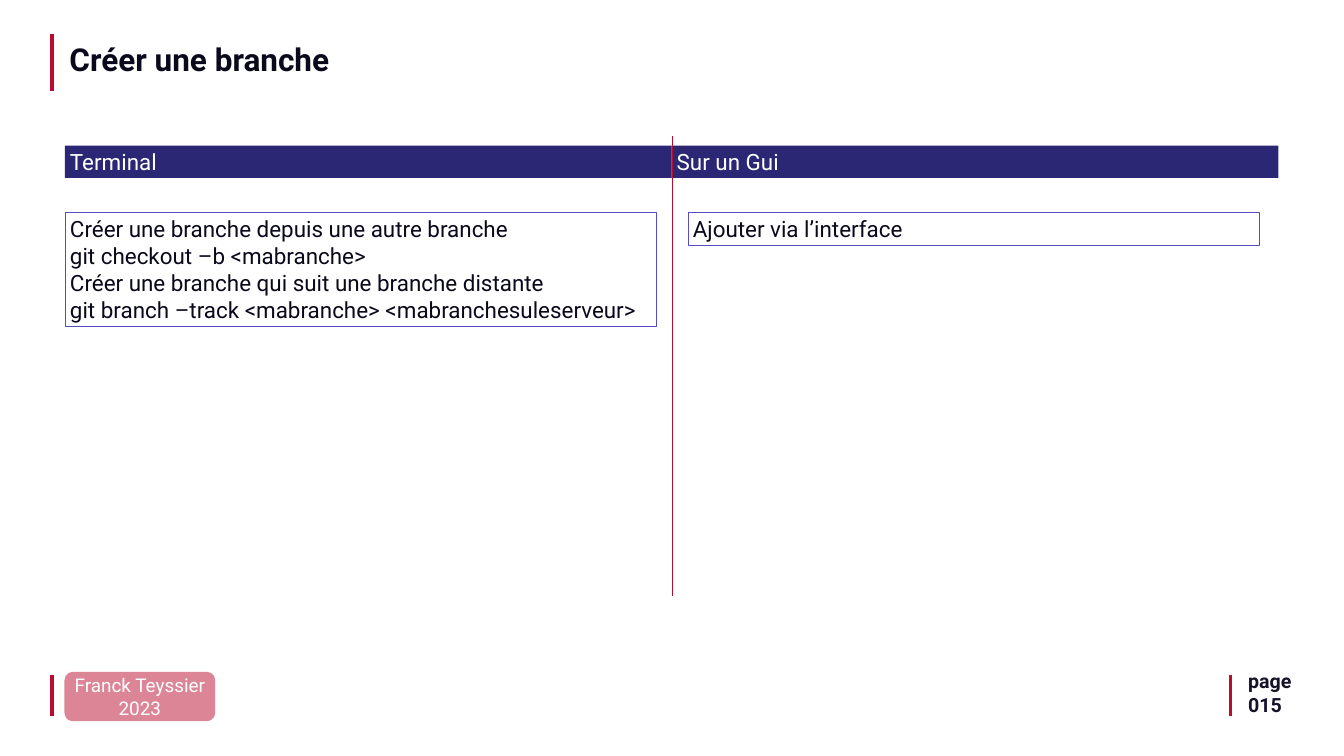
from lxml import etree
from pptx import Presentation
from pptx.dml.color import RGBColor
from pptx.enum.shapes import MSO_CONNECTOR, MSO_SHAPE
from pptx.enum.text import MSO_ANCHOR, PP_ALIGN
from pptx.oxml.ns import qn
from pptx.util import Inches, Pt

COLORS = {
    "red": "BA0C2F", "navy": "2B2774", "violet": "544DC4",
    "ink": "0A091B", "page": "15122A", "white": "FFFFFF",
}

# Content
TITLE = ["Créer une branche"]
COLUMNS = [
    {"heading": "Terminal", "left": 1.29, "body_left": 1.29, "body_width": 11.73,
     "lines": ["Créer une branche depuis une autre branche",
               "git checkout –b <mabranche>",
               "Créer une branche qui suit une branche distante",
               "git branch –track <mabranche> <mabranchesuleserveur>"]},
    {"heading": "Sur un Gui", "left": 13.33, "body_left": 13.65, "body_width": 11.34,
     "lines": ["Ajouter via l’interface"]},
]
AUTHOR = ["Franck Teyssier", "2023"]
PAGE_NUMBER = ["page", "015"]

# Text formats
FORMATS = {
    "title": {"size": Pt(45), "bold": True, "color": "ink"},
    "heading": {"size": Pt(32), "bold": False, "color": "white"},
    "body": {"size": Pt(32), "bold": False, "color": "ink"},
    "author": {"size": Pt(27), "bold": False, "color": "white"},
    "page": {"size": Pt(28), "bold": True, "color": "page"},
}

# Vertical rules: x, top, bottom, width in points
ACCENTS = [(1.03, 13.4, 14.21, 5), (24.42, 13.4, 14.21, 5), (1.03, 0.67, 1.8, 5)]
DIVIDER = (13.33, 2.7, 11.83, 0.5)

COLUMN_WIDTH = 12.04
HEADING_TOP, BODY_TOP = 2.89, 4.22
LINE_HEIGHT, PADDING = 0.54, 0.1


def rgb(name):
    return RGBColor.from_string(COLORS[name])


def write(box, lines, style, align=PP_ALIGN.LEFT, anchor=MSO_ANCHOR.TOP, spacing=None):
    frame = box.text_frame
    frame.word_wrap = True
    frame.vertical_anchor = anchor
    for index, line in enumerate(lines):
        para = frame.add_paragraph() if index else frame.paragraphs[0]
        para.alignment = align
        para.line_spacing = spacing
        span = para.add_run()
        span.text = line
        span.font.name = "Roboto"
        for key, value in FORMATS[style].items():
            if key == "color":
                span.font.color.rgb = rgb(value)
            else:
                setattr(span.font, key, value)


def add_text(page, area, lines, style, **options):
    box = page.shapes.add_textbox(*map(Inches, area))
    write(box, lines, style, **options)


def add_box(page, area, lines, style, kind=MSO_SHAPE.RECTANGLE, fill=None, line=None, **options):
    box = page.shapes.add_shape(kind, *map(Inches, area))
    box.shadow.inherit = False
    if fill:
        box.fill.solid()
        box.fill.fore_color.rgb = rgb(fill)
    else:
        box.fill.background()
    if line:
        box.line.color.rgb = rgb(line)
        box.line.width = Pt(0.75)
    else:
        box.line.fill.background()
    write(box, lines, style, **options)
    return box


def add_rule(page, x, top, bottom, width):
    rule = page.shapes.add_connector(MSO_CONNECTOR.STRAIGHT, *map(Inches, (x, top, x, bottom)))
    rule.line.color.rgb = rgb("red")
    rule.line.width = Pt(width)
    etree.SubElement(rule._element.spPr, qn("a:effectLst"))


def main():
    deck = Presentation()
    deck.slide_width, deck.slide_height = Inches(26.67), Inches(15)
    page = deck.slides.add_slide(deck.slide_layouts[6])

    # Accent rules and author badge
    for accent in ACCENTS:
        add_rule(page, *accent)
    badge = add_box(page, (1.28, 13.33, 2.99, 0.98), AUTHOR, "author",
                    kind=MSO_SHAPE.ROUNDED_RECTANGLE, fill="red",
                    align=PP_ALIGN.CENTER, anchor=MSO_ANCHOR.MIDDLE)
    tint = badge._element.spPr.find(qn("a:solidFill"))[0]
    etree.SubElement(tint, qn("a:alpha"), val="50000")

    # Title
    add_text(page, (1.28, 0.83, 13.39, 0.78), TITLE, "title", spacing=0.9)

    # Column headings, divider over them, then column bodies
    for column in COLUMNS:
        area = (column["left"], HEADING_TOP, COLUMN_WIDTH, LINE_HEIGHT + PADDING)
        add_box(page, area, [column["heading"]], "heading", fill="navy")
    add_rule(page, *DIVIDER)
    for column in COLUMNS:
        height = len(column["lines"]) * LINE_HEIGHT + PADDING
        area = (column["body_left"], BODY_TOP, column["body_width"], height)
        add_box(page, area, column["lines"], "body", line="violet")

    # Page number
    add_text(page, (24.67, 13.23, 2.53, 1.04), PAGE_NUMBER, "page")

    deck.save("out.pptx")


if __name__ == "__main__":
    main()
